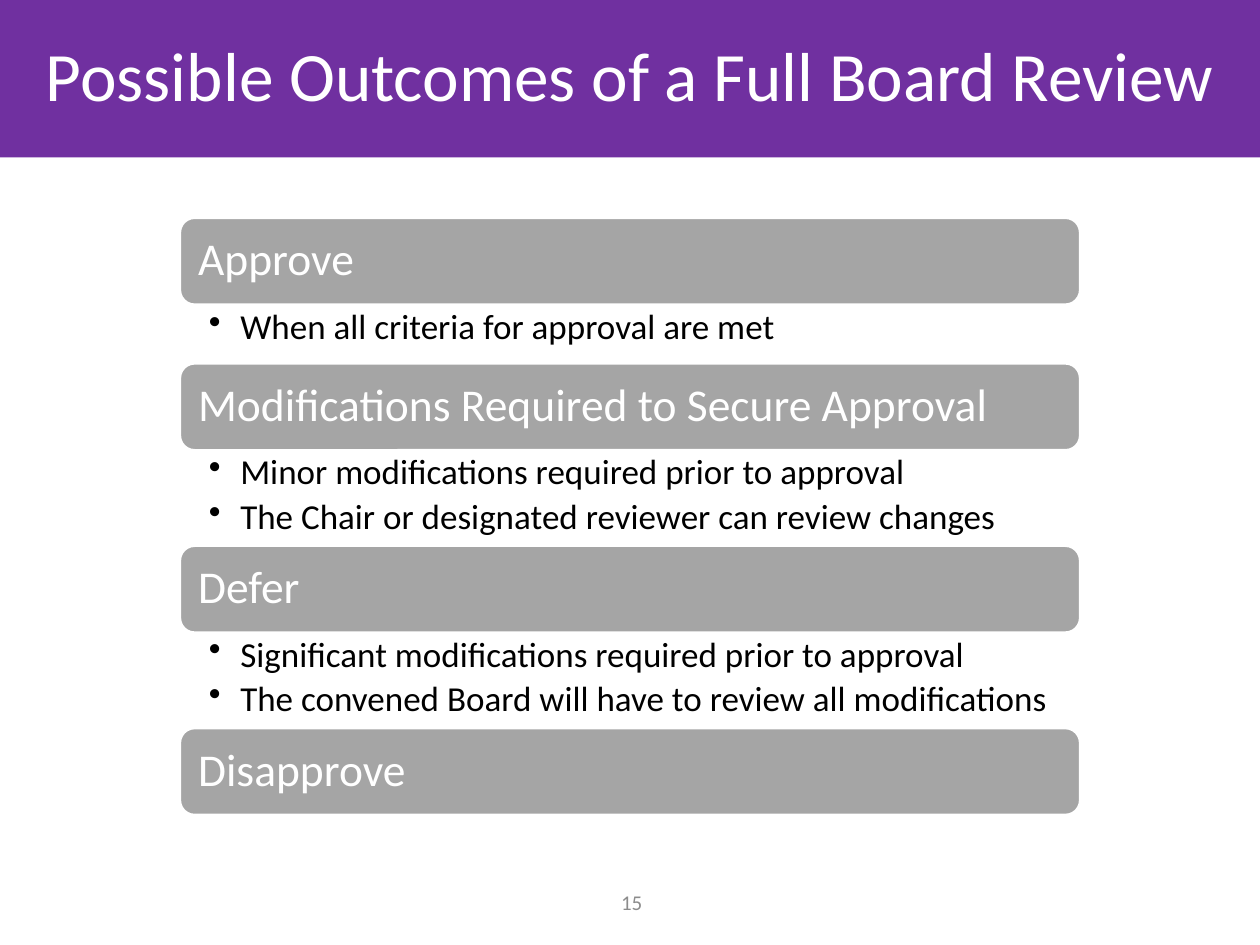
from dataclasses import dataclass
from typing import Any

import lxml.etree
import pptx
import pptx.dml.color
import pptx.enum.shapes
import pptx.enum.text
import pptx.oxml.ns
import pptx.util

Pt = pptx.util.Pt
RGB = pptx.dml.color.RGBColor
ALIGN = pptx.enum.text.PP_ALIGN
ANCHOR = pptx.enum.text.MSO_ANCHOR
SHAPE = pptx.enum.shapes.MSO_SHAPE

PURPLE = RGB(0x70, 0x30, 0xA0)
GREY = RGB(0xA5, 0xA5, 0xA5)
PAGE_GREY = RGB(0x8C, 0x8C, 0x8C)
WHITE = RGB(0xFF, 0xFF, 0xFF)
BLACK = RGB(0, 0, 0)
FONT = "Calibri"

# Layout of the outcome list, in points
LIST_LEFT, LIST_TOP, LIST_WIDTH = 103, 124.7, 514
BAR_HEIGHT = 49.2
DETAIL_HEIGHTS = {0: 0, 1: 34, 2: 55}  # by number of bullets
BULLET_INDENT = 18


@dataclass(frozen=True)
class Outcome:
    name: str
    details: tuple[str, ...] = ()


OUTCOMES = (
    Outcome("Approve", ("When all criteria for approval are met",)),
    Outcome("Modifications Required to Secure Approval", (
        "Minor modifications required prior to approval",
        "The Chair or designated reviewer can review changes")),
    Outcome("Defer", (
        "Significant modifications required prior to approval",
        "The convened Board will have to review all modifications")),
    Outcome("Disapprove"),
)


def apply(obj: Any, values: dict[str, Any]) -> None:
    for name, value in values.items():
        setattr(obj, name, value)


def set_frame(sp: Any, anchor: Any, left: float = 7.2, top: float = 3.6,
              right: float = 7.2) -> None:
    apply(sp.text_frame, {
        "word_wrap": True, "vertical_anchor": anchor,
        "margin_left": Pt(left), "margin_right": Pt(right),
        "margin_top": Pt(top), "margin_bottom": Pt(top)})


def write(p: Any, text: str, size: float, color: Any, align: Any = ALIGN.LEFT,
          spacing: float = 0.9) -> None:
    apply(p, {"alignment": align, "line_spacing": spacing})
    r = p.add_run()
    r.text = text
    apply(r.font, {"name": FONT, "size": Pt(size)})
    r.font.color.rgb = color


def add_block(s: Any, kind: Any, left: float, top: float, width: float,
              height: float, fill: Any) -> Any:
    sp = s.shapes.add_shape(kind, Pt(left), Pt(top), Pt(width), Pt(height))
    sp.shadow.inherit = False
    sp.fill.solid()
    sp.fill.fore_color.rgb = fill
    sp.line.fill.background()
    return sp


def add_bullet(p: Any) -> None:
    pPr = p._p.get_or_add_pPr()
    pPr.set("marL", str(Pt(BULLET_INDENT)))
    pPr.set("indent", str(-Pt(BULLET_INDENT)))
    bu = lxml.etree.SubElement(pPr, pptx.oxml.ns.qn("a:buChar"))
    bu.set("char", "•")


def add_outcome(s: Any, outcome: Outcome, top: float) -> float:
    """Draw a heading bar with its bullets and return the next top."""
    sp = add_block(s, SHAPE.ROUNDED_RECTANGLE, LIST_LEFT, top, LIST_WIDTH,
                   BAR_HEIGHT, GREY)
    sp.line.color.rgb = WHITE
    sp.line.width = Pt(1)
    set_frame(sp, ANCHOR.MIDDLE, left=7.8, right=7.8)
    write(sp.text_frame.paragraphs[0], outcome.name, 26, WHITE)

    top += BAR_HEIGHT
    height = DETAIL_HEIGHTS[len(outcome.details)]
    if outcome.details:
        sp = s.shapes.add_textbox(Pt(LIST_LEFT), Pt(top), Pt(LIST_WIDTH), Pt(height))
        set_frame(sp, ANCHOR.TOP, left=16.3, top=2.6, right=14.2)
        tf = sp.text_frame
        for i, detail in enumerate(outcome.details):
            p = tf.add_paragraph() if i else tf.paragraphs[0]
            add_bullet(p)
            write(p, detail, 20, BLACK)
            p.space_after = Pt(4)
    return top + height


def main() -> None:
    prs = pptx.Presentation()
    apply(prs, {"slide_width": Pt(720), "slide_height": Pt(540)})
    s = prs.slides.add_slide(prs.slide_layouts[6])

    # Title band
    sp = add_block(s, SHAPE.RECTANGLE, 0, 0, 720, 90, PURPLE)
    set_frame(sp, ANCHOR.MIDDLE)
    write(sp.text_frame.paragraphs[0], "Possible Outcomes of a Full Board Review",
          39.6, WHITE, ALIGN.CENTER)

    # Outcome list
    top = LIST_TOP
    for outcome in OUTCOMES:
        top = add_outcome(s, outcome, top)

    # Page number
    sp = s.shapes.add_textbox(Pt(337), Pt(501), Pt(48), Pt(29))
    set_frame(sp, ANCHOR.MIDDLE)
    write(sp.text_frame.paragraphs[0], "15", 12, PAGE_GREY, ALIGN.CENTER, 1.0)

    prs.save("out.pptx")


if __name__ == "__main__":
    main()
